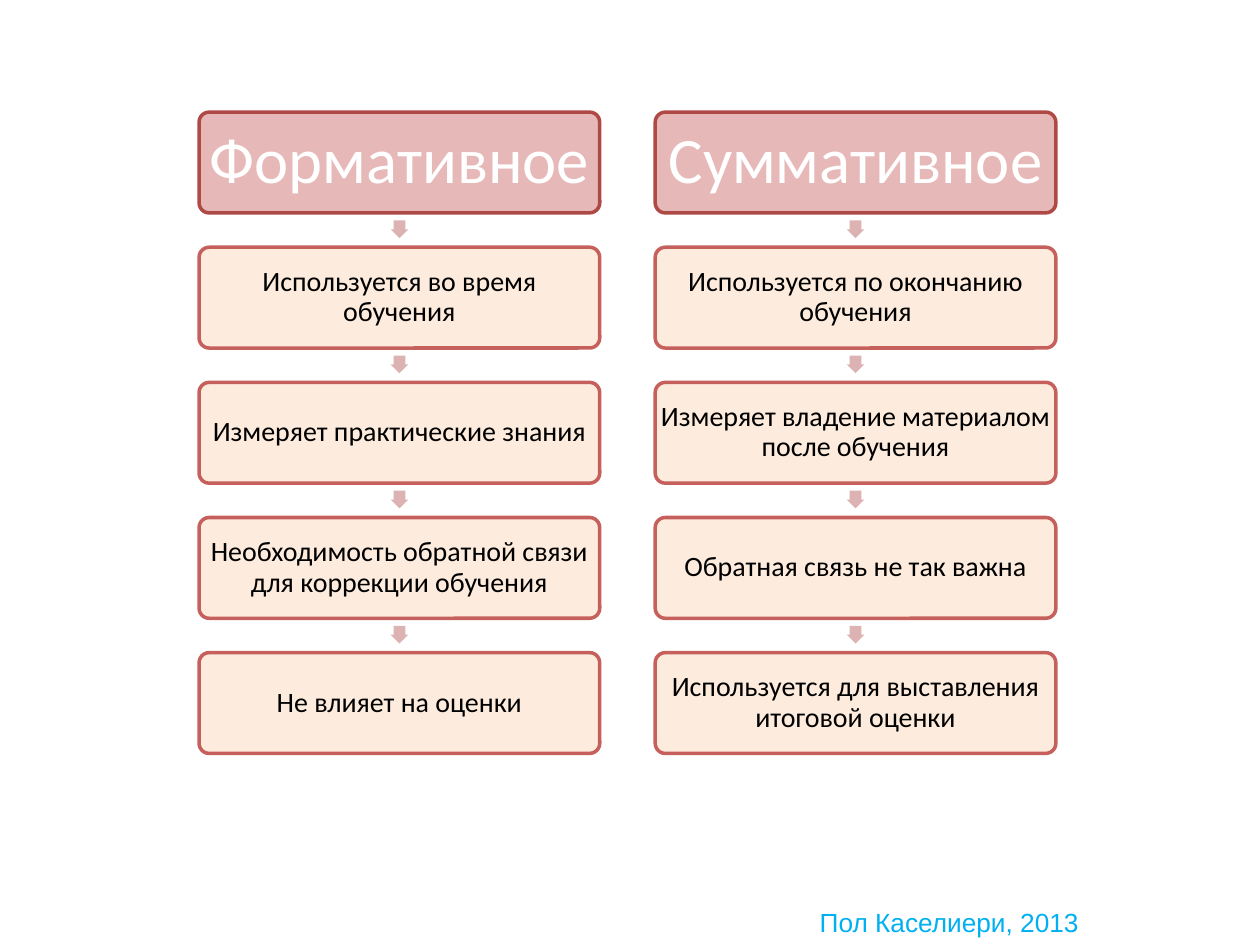
from pptx import Presentation
from pptx.dml.color import RGBColor
from pptx.enum import shapes, text
from pptx.oxml import ns
from pptx.util import Inches, Pt
from lxml import etree

COLUMNS = [
    ["Формативное",
     "Используется во время обучения",
     "Измеряет практические знания",
     "Необходимость обратной связи для коррекции обучения",
     "Не влияет на оценки"],
    ["Суммативное",
     "Используется по окончанию обучения",
     "Измеряет владение материалом после обучения",
     "Обратная связь не так важна",
     "Используется для выставления итоговой оценки"],
]
LEFT, COLUMN_STEP = 1.58, 3.62
TOP, BOTTOM_ROW = 0.89, 5.18
BOX_WIDTH, BOX_HEIGHT = 3.18, 0.8
ARROW_SIZE, ARROW_OFFSET = 0.14, 0.86


def color(value):
    return RGBColor.from_string(value)


def set_opacity(fill_parent, percent):
    for node in fill_parent.iter(ns.qn("a:srgbClr")):
        etree.SubElement(node, ns.qn("a:alpha"), val=str(percent * 1000))


class SlideBuilder:
    heading = dict(fill="E6B9B8", line="AE4946", ink="FFFFFF", size=37, inset=0.05)
    step = dict(fill="FDEADA", line="C0504D", ink="000000", size=16, inset=0.02,
                opacity=90)
    font_name = "Calibri"
    arrow_fill = "DCB3B2"

    def __init__(self, slide):
        self.slide = slide

    def add_shape(self, kind, left, top, width, height, fill):
        shape = self.slide.shapes.add_shape(
            kind, Inches(left), Inches(top), Inches(width), Inches(height))
        shape.shadow.inherit = False
        shape.fill.solid()
        shape.fill.fore_color.rgb = color(fill)
        return shape

    def set_text(self, frame, wording, name, size, ink, alignment):
        frame.word_wrap = True
        paragraph = frame.paragraphs[0]
        paragraph.text = wording
        paragraph.alignment = alignment
        paragraph.font.name = name
        paragraph.font.size = Pt(size)
        paragraph.font.color.rgb = color(ink)
        return paragraph

    def box(self, left, top, wording, style):
        shape = self.add_shape(shapes.MSO_SHAPE.ROUNDED_RECTANGLE, left, top,
                               BOX_WIDTH, BOX_HEIGHT, style["fill"])
        shape.adjustments[0] = 0.1
        shape.line.color.rgb = color(style["line"])
        shape.line.width = Pt(2)
        if "opacity" in style:
            set_opacity(shape.element.spPr, style["opacity"])
        frame = shape.text_frame
        frame.vertical_anchor = text.MSO_ANCHOR.MIDDLE
        inset = Inches(style["inset"])
        frame.margin_left = frame.margin_right = inset
        frame.margin_top = frame.margin_bottom = inset
        paragraph = self.set_text(frame, wording, self.font_name, style["size"],
                                  style["ink"], text.PP_ALIGN.CENTER)
        paragraph.line_spacing = 0.9

    def down_arrow(self, left, top):
        shape = self.add_shape(shapes.MSO_SHAPE.RIGHT_ARROW, left, top,
                               ARROW_SIZE, ARROW_SIZE, self.arrow_fill)
        shape.rotation = 90
        shape.adjustments[0] = 0.67
        shape.adjustments[1] = 0.5
        shape.line.fill.background()

    def column(self, left, wordings):
        row_step = (BOTTOM_ROW - TOP) / (len(wordings) - 1)
        arrow_left = left + (BOX_WIDTH - ARROW_SIZE) / 2
        for row, wording in enumerate(wordings):
            top = TOP + row * row_step
            self.box(left, top, wording, self.step if row else self.heading)
            if row < len(wordings) - 1:
                self.down_arrow(arrow_left, top + ARROW_OFFSET)

    def credit(self, wording):
        shape = self.slide.shapes.add_textbox(
            Inches(2.75), Inches(7.14), Inches(5.91), Inches(0.35))
        shape.text_frame.auto_size = text.MSO_AUTO_SIZE.SHAPE_TO_FIT_TEXT
        self.set_text(shape.text_frame, wording, "Arial", 15, "00B0F0",
                      text.PP_ALIGN.RIGHT)


def main():
    presentation = Presentation()
    presentation.slide_width = Inches(10)
    presentation.slide_height = Inches(7.5)
    builder = SlideBuilder(presentation.slides.add_slide(presentation.slide_layouts[6]))
    for index, wordings in enumerate(COLUMNS):
        builder.column(LEFT + index * COLUMN_STEP, wordings)
    builder.credit("Пол Каселиери, 2013")
    presentation.save("out.pptx")


if __name__ == "__main__":
    main()
